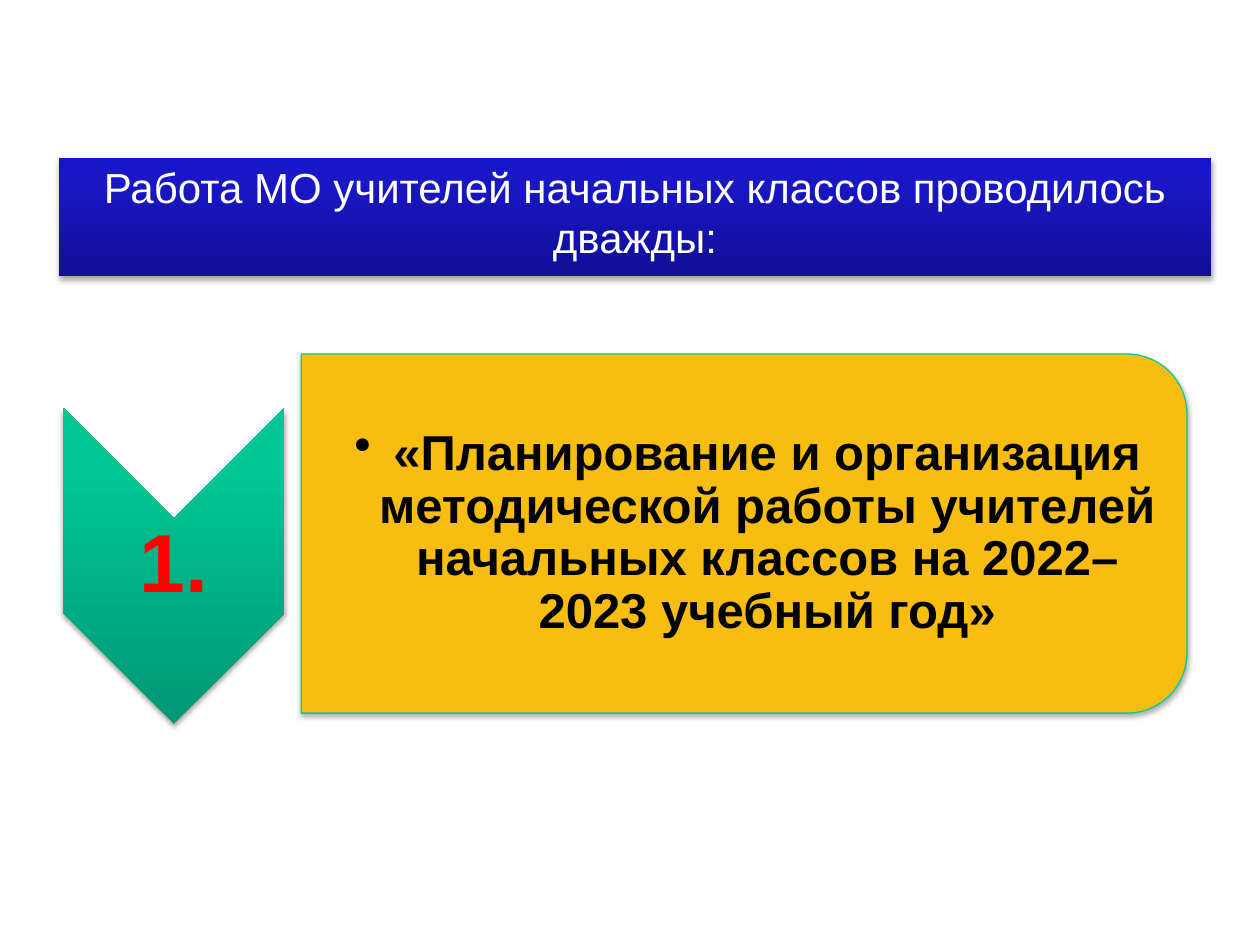
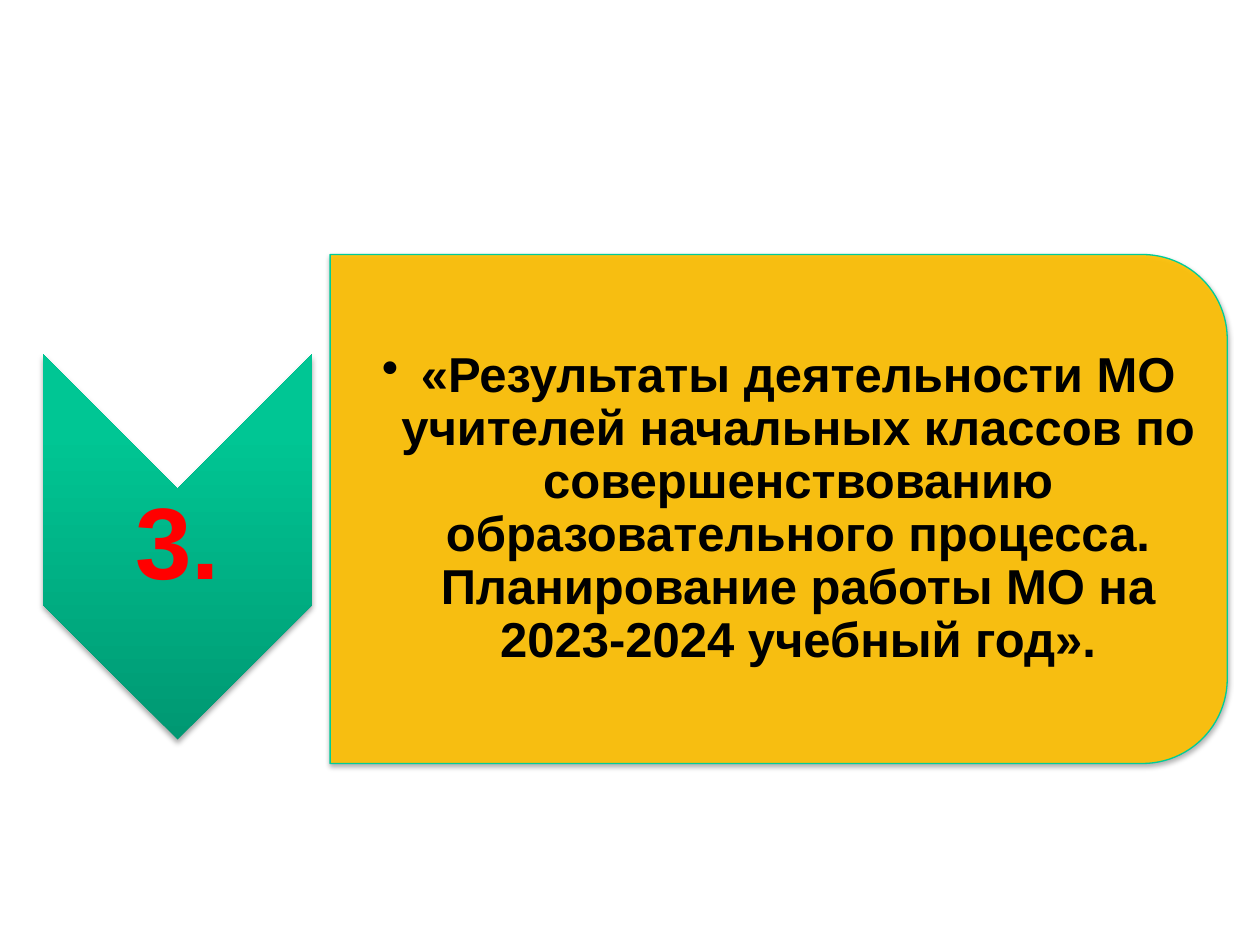
from lxml import etree
from pptx import Presentation, util as u
from pptx.dml.color import RGBColor
from pptx.enum import shapes, text
from pptx.oxml import parse_xml
from pptx.oxml.ns import nsdecls, qn

COLORS = {"white": "FFFFFF", "black": "000000", "red": "FF0000",
          "amber": "FFC000", "mint": "00CC99"}
GRADIENTS = {"green": [(0, "009872"), (80, "00C694"), (100, "00C795")],
             "blue": [(0, "110E97"), (80, "1917C6"), (100, "1515CA")]}
FONT = "Arial"

prs = Presentation()
prs.slide_width, prs.slide_height = u.Inches(10), u.Inches(7.5)
col, row = prs.slide_width / 100, prs.slide_height / 75


def decorate(sp, gradient=None):
    props = sp._element.spPr
    if gradient:
        stops = "".join(f'<a:gs pos="{pos * 1000}"><a:srgbClr val="{c}"/></a:gs>'
                        for pos, c in GRADIENTS[gradient])
        props.append(parse_xml(
            f'<a:gradFill {nsdecls("a")} rotWithShape="0"><a:gsLst>{stops}</a:gsLst>'
            '<a:lin ang="16200000" scaled="0"/></a:gradFill>'))
        sp.line.fill.background()
    for old in props.findall(qn("a:effectLst")):
        props.remove(old)
    props.append(parse_xml(
        f'<a:effectLst {nsdecls("a")}><a:outerShdw blurRad="{u.Pt(3.1)}" '
        f'dist="{u.Pt(1.8)}" dir="5400000" rotWithShape="0"><a:srgbClr val="{COLORS["black"]}">'
        '<a:alpha val="35000"/></a:srgbClr></a:outerShdw></a:effectLst>'))


def write(sp, content, size, color, margins, anchor, bold=True, bullet=False, spacing=0.9):
    tf = sp.text_frame
    frame = {"word_wrap": True, "auto_size": text.MSO_AUTO_SIZE.NONE, "vertical_anchor": anchor}
    for side, margin in zip(("left", "top", "right", "bottom"), margins):
        frame[f"margin_{side}"] = u.Inches(margin)
    for name, value in frame.items():
        setattr(tf, name, value)
    p = tf.paragraphs[0]
    p.alignment, p.line_spacing = text.PP_ALIGN.CENTER, spacing
    if bullet:
        pPr = p._p.get_or_add_pPr()
        pPr.set("marL", str(u.Inches(0.31)))
        pPr.set("indent", str(-u.Inches(0.31)))
        etree.SubElement(pPr, qn("a:buChar")).set("char", "•")
    r = p.add_run()
    r.text = content
    for name, value in {"name": FONT, "size": u.Pt(size), "bold": bold}.items():
        setattr(r.font, name, value)
    r.font.color.rgb = RGBColor.from_string(COLORS[color])


steps = [
    {"title": "Работа МО учителей начальных классов проводилось дважды:",
     "number": "1.", "size": 47, "margin": 0.03,
     "arrow": (5, 32.35, 17.6, 25.1), "panel": (23.9, 28.1, 70.3, 28.5),
     "topic": "«Планирование и организация методической работы учителей "
              "начальных классов на 2022– 2023 учебный год»"},
    {"title": None,
     "number": "3.", "size": 58, "margin": 0.04,
     "arrow": (3.4, 28.1, 21.4, 30.6), "panel": (26.2, 20.2, 71.2, 40.4),
     "topic": "«Результаты деятельности МО учителей начальных классов по "
              "совершенствованию образовательного процесса. Планирование работы "
              "МО на 2023-2024 учебный год»."},
]

for step in steps:
    s = prs.slides.add_slide(prs.slide_layouts[5 if step["title"] else 6])
    if step["title"]:
        sp = s.shapes.title
        sp.left, sp.top = int(4.7 * col), int(12.5 * row)
        sp.width, sp.height = int(91.4 * col), int(9.4 * row)
        decorate(sp, "blue")
        write(sp, step["title"], 24, "white", (0, 0.03, 0, 0),
              text.MSO_ANCHOR.TOP, bold=False, spacing=1.0)

    turned = {}
    for part, preset in (("arrow", shapes.MSO_SHAPE.CHEVRON),
                         ("panel", shapes.MSO_SHAPE.ROUND_2_SAME_RECTANGLE)):
        x, y, w, h = step[part]
        sp = s.shapes.add_shape(preset, int((x + (w - h) / 2) * col), int((y + (h - w) / 2) * row),
                                int(h * col), int(w * row))
        sp.rotation = 90
        turned[part] = sp

    decorate(turned["arrow"], "green")
    sp = turned["panel"]
    sp.fill.solid()
    sp.fill.fore_color.rgb = RGBColor.from_string(COLORS["amber"])
    color = sp._element.spPr.find(qn("a:solidFill")).find(qn("a:srgbClr"))
    etree.SubElement(color, qn("a:alpha")).set("val", "90000")
    sp.line.color.rgb = RGBColor.from_string(COLORS["mint"])
    sp.line.width = u.Pt(0.75)
    decorate(sp)

    x, y, w, h = step["arrow"]
    sp = s.shapes.add_textbox(int(x * col), int((y + w / 2) * row), int(w * col), int((h - w) * row))
    write(sp, step["number"], step["size"], "red", [step["margin"]] * 4, text.MSO_ANCHOR.MIDDLE)

    x, y, w, h = step["panel"]
    inset = 0.05 * h
    sp = s.shapes.add_textbox(int(x * col), int((y + inset) * row),
                              int((w - inset) * col), int((h - 2 * inset) * row))
    write(sp, step["topic"], 28, "black", (0.22, 0.02, 0.02, 0.02),
          text.MSO_ANCHOR.MIDDLE, bullet=True)

prs.save("out.pptx")
